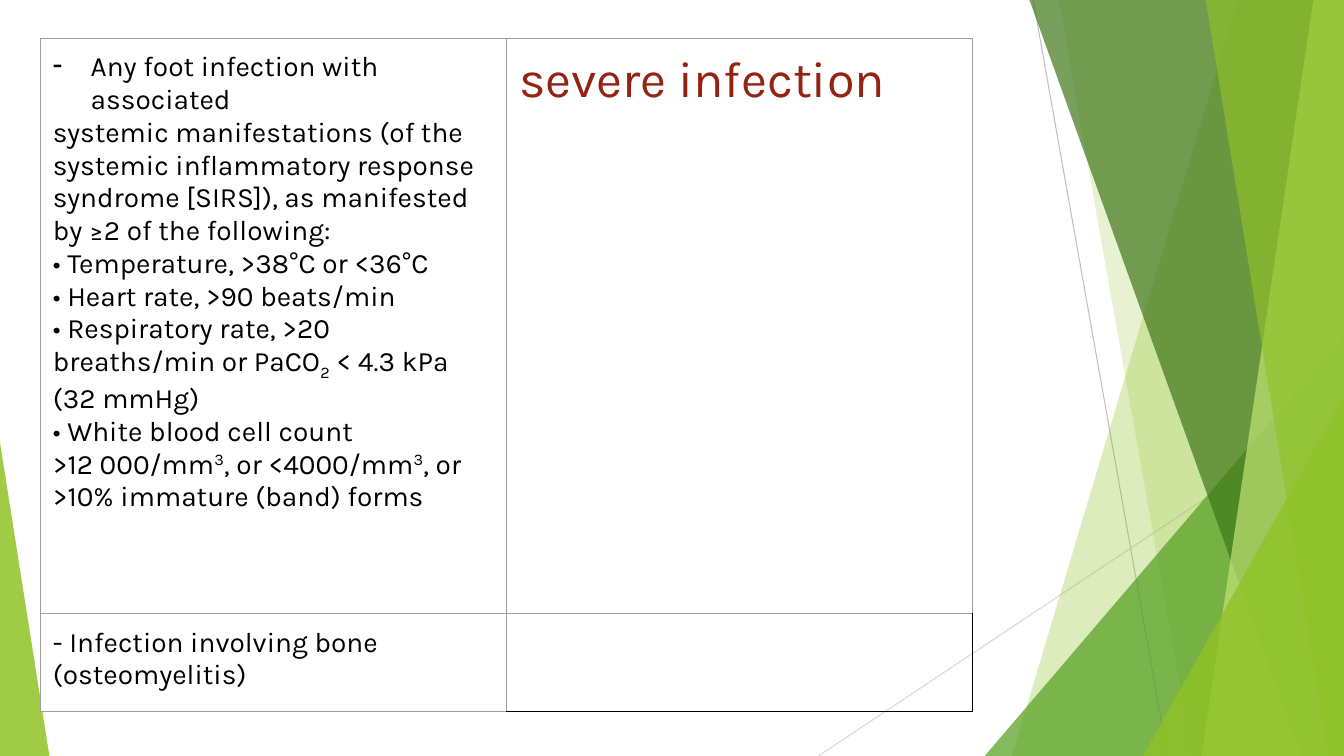
from dataclasses import dataclass

from lxml import etree
from pptx import Presentation
from pptx.dml.color import RGBColor
from pptx.enum.shapes import MSO_CONNECTOR, MSO_SHAPE
from pptx.oxml.ns import qn
from pptx.util import Pt

STRAIGHT = MSO_CONNECTOR.STRAIGHT
TRIANGLE = MSO_SHAPE.ISOSCELES_TRIANGLE

WIDTH, HEIGHT = 960, 540
FACET_TOP = -0.7
FONT = "Karla"
LINE_WIDTH = 0.75
CELL_MARGIN = 9
DASH_INDENT = 27
SUBSCRIPT, SUPERSCRIPT = -25, 30

COLOURS = {
    "lime": "90C226",
    "pale lime": "C0E474",
    "green": "54A021",
    "dark green": "3F7819",
    "grey": "BFBFBF",
    "light grey": "D9D9D9",
    "border": "9E9E9E",
    "black": "000000",
    "white": "FFFFFF",
    "red": "932313",
}


@dataclass
class Ray:
    start: tuple[float, float]
    end: tuple[float, float]
    colour: str


@dataclass
class Facet:
    """A band from a slanted left edge to the right edge of the slide."""
    top_x: float
    bottom_x: float
    colour: str
    opacity: int


@dataclass
class Corner:
    """A right triangle standing on the bottom edge; apex is 0 (left) or 1 (right)."""
    left: float
    top: float
    width: float
    apex: int
    colour: str
    opacity: int


@dataclass
class Line:
    """One paragraph, as pieces of text with their baseline shifts."""
    pieces: list[tuple[str, int]]
    dash: bool = False


@dataclass
class Cell:
    lines: list[Line]
    size: float = 20
    colour: str = "black"
    fill: str | None = "white"
    bottom_margin: float = 3.6
    outer_border: str = "border"


RAYS = [
    Ray((738, 0), (834, HEIGHT), "grey"),
    Ray((WIDTH, 290.2), (584.6, HEIGHT), "light grey"),
]

DECORATION = [
    Facet(884.2, 722.9, "lime", 30),
    Facet(756, 851.8, "lime", 20),
    Corner(703.4, 239.8, 256.6, 1, "green", 72),
    Facet(735.1, 929.5, "dark green", 70),
    Facet(938.2, 858.2, "pale lime", 70),
    Facet(861.1, 949, "lime", 65),
    Corner(816.5, 283, 143.5, 1, "lime", 80),
    Corner(0, 316.1, 35.3, 0, "lime", 85),
]

TABLE_LEFT, TABLE_TOP = 28.8, 27.4
COLUMN_WIDTH = 333
ROW_HEIGHTS = [411.1, 69.8]

CRITERIA = [
    Line([("Any foot infection with associated", 0)], dash=True),
    Line([("systemic manifestations (of the", 0)]),
    Line([("systemic inflammatory response syndrome [SIRS]), "
           "as manifested by ≥2 of the following:", 0)]),
    Line([("• Temperature, >38°C or <36°C", 0)]),
    Line([("• Heart rate, >90 beats/min", 0)]),
    Line([("• Respiratory rate, >20 breaths/min or PaCO", 0),
          ("2", SUBSCRIPT),
          (" < 4.3 kPa (32 mmHg)", 0)]),
    Line([("• White blood cell count", 0)]),
    Line([(">12 000/mm", 0), ("3", SUPERSCRIPT),
          (", or <4000/mm", 0), ("3", SUPERSCRIPT),
          (", or >10% immature (band) forms", 0)]),
]

CELLS = [
    [Cell(CRITERIA),
     Cell([Line([("severe infection", 0)])], size=36, colour="red")],
    [Cell([Line([("- Infection involving bone (osteomyelitis)", 0)])],
          bottom_margin=CELL_MARGIN),
     Cell([], fill=None, outer_border="black")],
]


def rgb(colour: str) -> RGBColor:
    return RGBColor.from_string(COLOURS[colour])


def draw_ray(slide, ray: Ray) -> None:
    connector = slide.shapes.add_connector(
        STRAIGHT, *(Pt(value) for value in ray.start + ray.end))
    connector.line.color.rgb = rgb(ray.colour)
    connector.line.width = Pt(LINE_WIDTH)
    etree.SubElement(connector._element.spPr, qn("a:effectLst"))


def add_facet(slide, facet: Facet):
    builder = slide.shapes.build_freeform(Pt(facet.top_x), Pt(FACET_TOP))
    corners = [(WIDTH, FACET_TOP), (WIDTH, HEIGHT), (facet.bottom_x, HEIGHT)]
    builder.add_line_segments([(Pt(x), Pt(y)) for x, y in corners], close=True)
    return builder.convert_to_shape()


def add_corner(slide, corner: Corner):
    shape = slide.shapes.add_shape(
        TRIANGLE, Pt(corner.left), Pt(corner.top),
        Pt(corner.width), Pt(HEIGHT - corner.top))
    shape.adjustments[0] = corner.apex
    return shape


def draw_decoration(slide, item: Facet | Corner) -> None:
    add = add_facet if isinstance(item, Facet) else add_corner
    shape = add(slide, item)
    shape.shadow.inherit = False
    shape.line.fill.background()
    shape.fill.solid()
    shape.fill.fore_color.rgb = rgb(item.colour)
    colour = shape._element.spPr.find(qn("a:solidFill"))[0]
    etree.SubElement(colour, qn("a:alpha"), val=str(item.opacity * 1000))


def write_line(paragraph, line: Line, cell: Cell) -> None:
    paragraph.font.name = FONT
    paragraph.font.size = Pt(cell.size)
    paragraph.font.color.rgb = rgb(cell.colour)
    for text, baseline in line.pieces:
        run = paragraph.add_run()
        run.text = text
        if baseline:
            run._r.get_or_add_rPr().set("baseline", str(baseline * 1000))
    if line.dash:
        properties = paragraph._p.get_or_add_pPr()
        properties.set("marL", str(Pt(DASH_INDENT)))
        properties.set("indent", str(-Pt(DASH_INDENT)))
        bullet = etree.Element(qn("a:buChar"), char="-")
        properties.insert(0, bullet)


def set_borders(table_cell, outer: str) -> None:
    """Give the left and top edges the common colour, right and bottom the outer one."""
    properties = table_cell._tc.get_or_add_tcPr()
    edges = {"lnL": "border", "lnR": outer, "lnT": "border", "lnB": outer}
    for position, (edge, colour) in enumerate(edges.items()):
        border = etree.Element(qn(f"a:{edge}"), w=str(Pt(LINE_WIDTH)))
        fill = etree.SubElement(border, qn("a:solidFill"))
        etree.SubElement(fill, qn("a:srgbClr"), val=COLOURS[colour])
        properties.insert(position, border)


def fill_cell(table_cell, cell: Cell) -> None:
    table_cell.margin_left = table_cell.margin_right = Pt(CELL_MARGIN)
    table_cell.margin_top = Pt(CELL_MARGIN)
    table_cell.margin_bottom = Pt(cell.bottom_margin)
    if cell.fill:
        table_cell.fill.solid()
        table_cell.fill.fore_color.rgb = rgb(cell.fill)
    else:
        table_cell.fill.background()
    set_borders(table_cell, cell.outer_border)
    frame = table_cell.text_frame
    for index, line in enumerate(cell.lines):
        paragraph = frame.add_paragraph() if index else frame.paragraphs[0]
        write_line(paragraph, line, cell)


def draw_table(slide) -> None:
    columns = len(CELLS[0])
    table = slide.shapes.add_table(
        len(CELLS), columns, Pt(TABLE_LEFT), Pt(TABLE_TOP),
        Pt(COLUMN_WIDTH * columns), Pt(sum(ROW_HEIGHTS))).table
    table.first_row = table.horz_banding = False
    for row, height, cells in zip(table.rows, ROW_HEIGHTS, CELLS):
        row.height = Pt(height)
        for table_cell, cell in zip(row.cells, cells):
            fill_cell(table_cell, cell)


def main() -> None:
    presentation = Presentation()
    presentation.slide_width, presentation.slide_height = Pt(WIDTH), Pt(HEIGHT)
    slide = presentation.slides.add_slide(presentation.slide_layouts[6])
    for ray in RAYS:
        draw_ray(slide, ray)
    for item in DECORATION:
        draw_decoration(slide, item)
    draw_table(slide)
    presentation.save("out.pptx")


if __name__ == "__main__":
    main()
